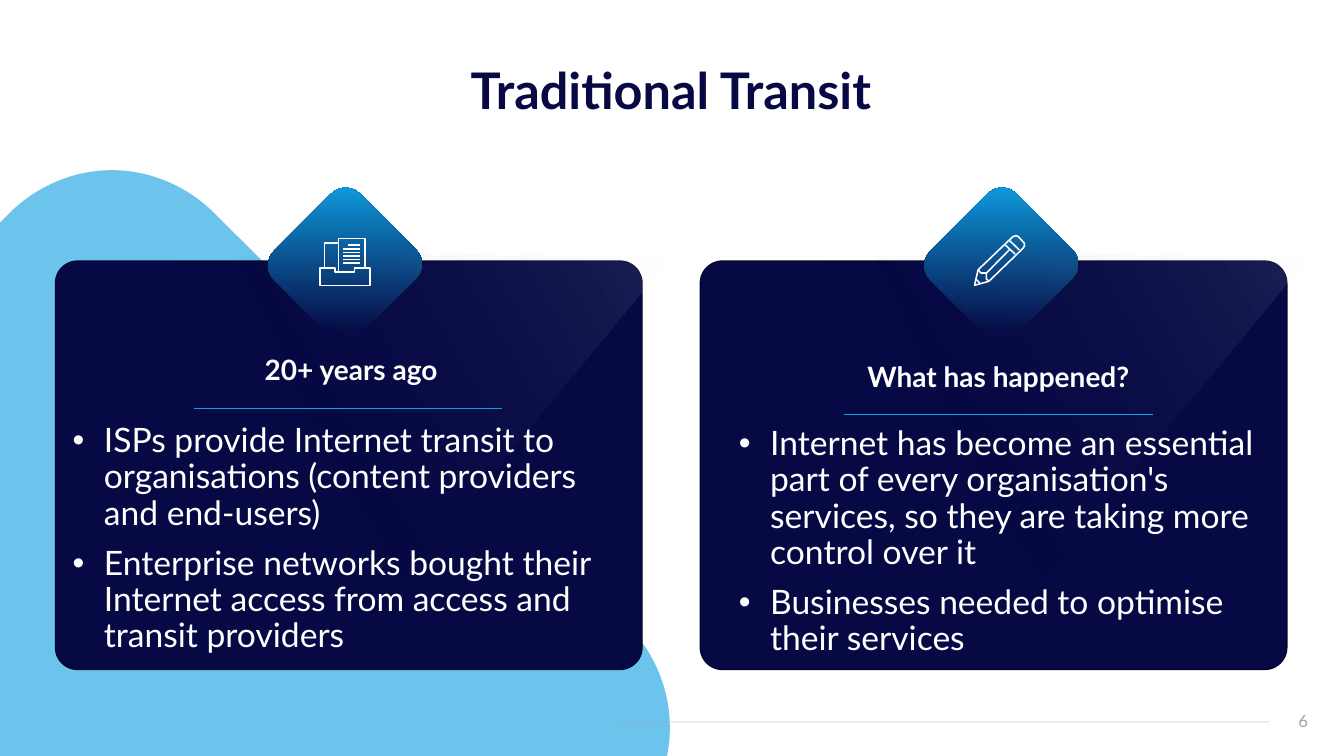
from lxml import etree
from pptx import Presentation
from pptx.dml.color import RGBColor
from pptx.enum import shapes, text
from pptx.oxml import ns
from pptx.util import Cm, Pt

FONT = "Lato"
NAVY, EDGE, SKY, RULE, GREY, WHITE = "060943", "040630", "0F9FE1", "129EE0", "A4A5A4", "FFFFFF"
TITLE = "Traditional Transit"
PAGE = "6"

TRAY = [
    [(0.03, 0.76), (0.42, 0.76), (0.42, 0.87), (0.9, 0.87), (0.9, 0.76),
     (1.3, 0.76), (1.3, 1.2), (0.03, 1.2), (0.03, 0.76)],
    [(0.15, 0.76), (0.15, 0.14), (0.5, 0.14)],
    [(0.5, 0.84), (0.5, 0.02), (1.17, 0.02), (1.17, 0.76)],
] + [[(0.62 if row else 0.75, 0.19 + 0.09 * row), (1.04, 0.19 + 0.09 * row)] for row in range(6)]
PENCIL = [
    [(0.02, 1.27), (0.11, 0.88), (0.99, 0.04), (1.07, 0.02), (1.13, 0.05),
     (1.27, 0.2), (1.28, 0.27), (1.25, 0.33), (0.38, 1.17), (0.02, 1.27)],
    [(0.11, 0.88), (0.18, 0.96), (0.32, 0.96), (0.32, 1.11), (0.38, 1.17)],
    [(0.9, 0.14), (1.15, 0.38)],
    [(0.79, 0.25), (1.04, 0.48)],
    [(0.9, 0.37), (0.32, 0.96)],
    [(0.06, 1.12), (0.15, 1.21)],
]

CARDS = [
    {"heading": "20+ years ago",
     "points": ["ISPs provide Internet transit to organisations (content providers and end-users)",
                "Enterprise networks bought their Internet access from access and transit providers"],
     "left": 1.4, "diamond": 7.16, "sheen": 5.97, "heading_at": (2.31, 7.67),
     "points_at": (1.83, 10.29, 13.89, 6.6), "rule": (4.88, 10.29),
     "icon": TRAY, "icon_at": (8.03, 5.99)},
    {"heading": "What has happened?",
     "points": ["Internet has become an essential part of every organisation's services, "
                "so they are taking more control over it",
                "Businesses needed to optimise their services"],
     "left": 17.65, "diamond": 23.7, "sheen": 22.05, "heading_at": (18.62, 7.85),
     "points_at": (18.62, 10.44, 13.34, 6.45), "rule": (21.27, 10.44),
     "icon": PENCIL, "icon_at": (24.54, 5.92)},
]


def color(value):
    return RGBColor.from_string(value)


def add_alpha(fill_parent, percent):
    srgb = next(fill_parent.iter(ns.qn("a:srgbClr")))
    etree.SubElement(srgb, ns.qn("a:alpha")).set("val", str(percent * 1000))


def set_gradient(shape, stops, angle):
    shape.fill.gradient()
    shape.fill.gradient_angle = 0
    grad = shape._element.spPr.find(ns.qn("a:gradFill"))
    stop_list = grad.find(ns.qn("a:gsLst"))
    for stop in list(stop_list):
        stop_list.remove(stop)
    for position, value, alpha in stops:
        stop = etree.SubElement(stop_list, ns.qn("a:gs"), pos=str(position * 1000))
        etree.SubElement(stop, ns.qn("a:srgbClr"), val=value)
        add_alpha(stop, alpha)
    grad.find(ns.qn("a:lin")).set("ang", str(angle * 60000))


def add_line(slide, start, end, value, width):
    line = slide.shapes.add_connector(shapes.MSO_CONNECTOR.STRAIGHT,
                                      *[Cm(v) for v in (*start, *end)])
    line.line.color.rgb = color(value)
    line.line.width = Pt(width)
    etree.SubElement(line._element.spPr, ns.qn("a:effectLst"))
    return line


def add_outline(slide, points, closed=True):
    first, *rest = [(Cm(x), Cm(y)) for x, y in points]
    builder = slide.shapes.build_freeform(*first)
    builder.add_line_segments(rest, close=closed)
    outline = builder.convert_to_shape()
    outline.shadow.inherit = False
    outline.line.fill.background()
    return outline


def curve(p0, p1, p2, p3, steps=24):
    weights = [((1 - t) ** 3, 3 * t * (1 - t) ** 2, 3 * t * t * (1 - t), t ** 3)
               for t in (i / steps for i in range(steps + 1))]
    return [tuple(sum(w * p[axis] for w, p in zip(row, (p0, p1, p2, p3))) for axis in (0, 1))
            for row in weights]


def write(shape, lines, size, value, align, bold=False, spacing=0.9, bullets=False):
    frame = shape.text_frame
    frame.word_wrap = True
    frame.auto_size = text.MSO_AUTO_SIZE.NONE
    frame.vertical_anchor = text.MSO_ANCHOR.MIDDLE
    frame.margin_left = frame.margin_right = frame.margin_top = frame.margin_bottom = 0
    for i, line in enumerate(lines):
        paragraph = frame.paragraphs[0] if i == 0 else frame.add_paragraph()
        paragraph.text = line
        if bullets:
            props = paragraph._p.get_or_add_pPr()
            props.set("marL", str(Cm(0.79)))
            props.set("indent", str(-Cm(0.79)))
            bullet_color = etree.SubElement(props, ns.qn("a:buClr"))
            etree.SubElement(bullet_color, ns.qn("a:srgbClr"), val=value)
            etree.SubElement(props, ns.qn("a:buFont"), typeface="Arial")
            etree.SubElement(props, ns.qn("a:buChar"), char="•")
        paragraph.alignment = align
        paragraph.line_spacing = spacing
        if i:
            paragraph.space_before = Pt(10)
        paragraph.font.name = FONT
        paragraph.font.size = Pt(size)
        paragraph.font.bold = bold
        paragraph.font.color.rgb = color(value)


def add_text(slide, box, *args, **kwargs):
    write(slide.shapes.add_textbox(*[Cm(v) for v in box]), *args, **kwargs)


def add_rounded(slide, box, radius):
    rounded = slide.shapes.add_shape(shapes.MSO_SHAPE.ROUNDED_RECTANGLE, *[Cm(v) for v in box])
    rounded.adjustments[0] = radius
    rounded.shadow.inherit = False
    return rounded


def add_icon(slide, strokes, origin):
    for stroke in strokes:
        points = [(origin[0] + x, origin[1] + y) for x, y in stroke]
        if len(points) == 2:
            add_line(slide, *points, WHITE, 1.1)
            continue
        closed = points[0] == points[-1]
        outline = add_outline(slide, points[:-1] if closed else points, closed)
        outline.fill.background()
        outline.line.color.rgb = color(WHITE)
        outline.line.width = Pt(1.1)


def add_backdrop(slide):
    blob = add_outline(slide, [
        *curve((2.82, 4.29), (3.76, 4.29), (4.7, 4.67), (5.41, 5.38)),
        *curve((15.82, 15.77), (16.71, 16.66), (17.04, 17.91), (16.81, 19.05)),
        (0, 19.05), (0, 5.61),
        *curve((0.23, 5.38), (0.94, 4.67), (1.88, 4.29), (2.82, 4.29))])
    blob.fill.solid()
    blob.fill.fore_color.rgb = color(SKY)
    add_alpha(blob._element.spPr, 61)
    footer = add_line(slide, (15.62, 18.19), (31.98, 18.19), GREY, 0.75)
    add_alpha(footer._element.spPr, 38)


def add_card(slide, card):
    panel = add_rounded(slide, (card["left"], 6.58, 14.78, 10.29), 0.054)
    panel.fill.solid()
    panel.fill.fore_color.rgb = color(NAVY)
    panel.line.color.rgb = color(EDGE)
    panel.line.width = Pt(1)

    diamond = add_rounded(slide, (card["diamond"], 5.16, 3.07, 3.02), 0.167)
    diamond.rotation = 315
    diamond.line.fill.background()
    set_gradient(diamond, [(0, NAVY, 100), (10, NAVY, 100), (100, SKY, 100)], 315)

    x, y = card["sheen"], 6.43
    sheen = add_outline(slide, [(x, y), (x + 10.97, y), (x + 3.96, y + 8.48)])
    set_gradient(sheen, [(0, NAVY, 0), (26, NAVY, 0), (100, WHITE, 9)], 330)

    add_text(slide, (*card["heading_at"], 13.08, 3.38), [card["heading"]], 20, WHITE,
             text.PP_ALIGN.CENTER, bold=True)
    add_text(slide, card["points_at"], card["points"], 24, WHITE, text.PP_ALIGN.LEFT, bullets=True)
    rule_x, rule_y = card["rule"]
    add_line(slide, (rule_x, rule_y), (rule_x + 7.78, rule_y), RULE, 0.75)
    add_icon(slide, card["icon"], card["icon_at"])


def main():
    deck = Presentation()
    deck.slide_width, deck.slide_height = Cm(33.87), Cm(19.05)
    slide = deck.slides.add_slide(deck.slide_layouts[5])
    title = slide.shapes.title
    title.left, title.top, title.width, title.height = Cm(1.3), Cm(0.97), Cm(31.22), Cm(2.77)
    write(title, [TITLE], 36, NAVY, text.PP_ALIGN.CENTER, bold=True)
    add_backdrop(slide)
    for card in CARDS:
        add_card(slide, card)
    add_text(slide, (25.35, 17.65, 7.62, 1.02), [PAGE], 12, GREY, text.PP_ALIGN.RIGHT, spacing=1.0)
    deck.save("out.pptx")


if __name__ == "__main__":
    main()
